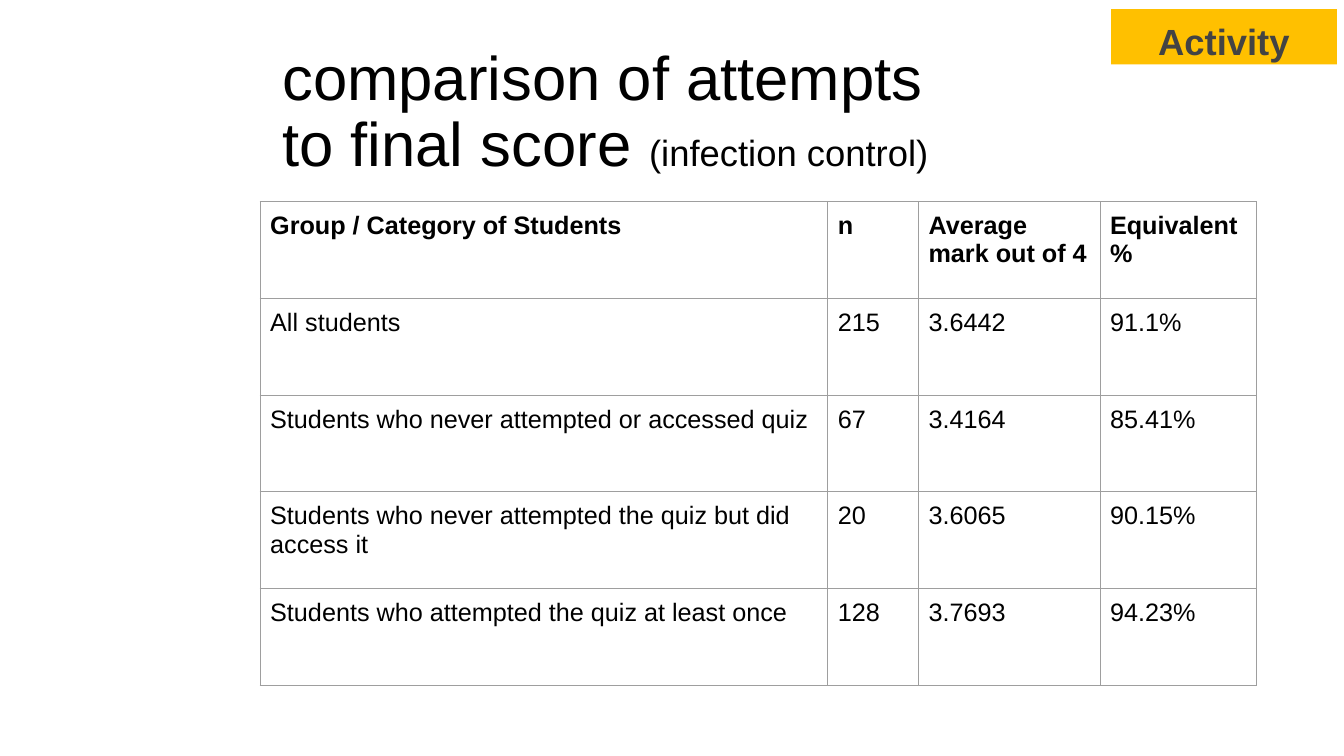
from lxml.etree import SubElement
from pptx import Presentation
from pptx.dml.color import RGBColor
from pptx.enum.shapes import MSO_SHAPE
from pptx.enum.text import MSO_ANCHOR, MSO_AUTO_SIZE, PP_ALIGN
from pptx.oxml.ns import qn
from pptx.util import Emu, Pt

SCALE = 9144
INSET = 10
COLORS = {"text": "000000", "border": "9E9E9E", "badge": "FFC000", "badge_text": "434343"}


def px(length):
    return Emu(length * SCALE)


def write(paragraph, text, size=18, bold=False, color="text", align=PP_ALIGN.LEFT):
    paragraph.alignment = align
    run = paragraph.add_run()
    run.text = text
    run.font.name = "Arial"
    run.font.size = Pt(size)
    run.font.bold = bold
    run.font.color.rgb = RGBColor.from_string(COLORS[color])


presentation = Presentation()
presentation.slide_width = px(1333)
presentation.slide_height = px(750)
slide = presentation.slides.add_slide(presentation.slide_layouts[5])

title = slide.shapes.title
title.left, title.top, title.width, title.height = px(270), px(40), px(710), px(145)
title_frame = title.text_frame
title_frame.auto_size = MSO_AUTO_SIZE.NONE
title_frame.vertical_anchor = MSO_ANCHOR.MIDDLE
title_paragraph = title_frame.paragraphs[0]
title_paragraph.line_spacing = 0.9
write(title_paragraph, "comparison of attempts to final score ", size=44)
write(title_paragraph, "(infection control)", size=26)

badge = slide.shapes.add_shape(MSO_SHAPE.RECTANGLE, px(1102), px(9), px(224), px(55))
badge.shadow.inherit = False
badge.fill.solid()
badge.fill.fore_color.rgb = RGBColor.from_string(COLORS["badge"])
badge.line.fill.background()
badge_frame = badge.text_frame
badge_frame.word_wrap = True
badge_frame.vertical_anchor = MSO_ANCHOR.TOP
write(badge_frame.paragraphs[0], "Activity", size=26, bold=True,
      color="badge_text", align=PP_ALIGN.CENTER)

for frame in (title_frame, badge_frame):
    frame.margin_left = frame.margin_right = px(INSET)
    frame.margin_top = frame.margin_bottom = px(INSET)

rows = [
    ("Group / Category of Students", "n", "Average mark out of 4", "Equivalent %"),
    ("All students", "215", "3.6442", "91.1%"),
    ("Students who never attempted or accessed quiz", "67", "3.4164", "85.41%"),
    ("Students who never attempted the quiz but did access it", "20", "3.6065", "90.15%"),
    ("Students who attempted the quiz at least once", "128", "3.7693", "94.23%"),
]
column_widths = [563, 90, 180, 155]
row_height = 96

table = slide.shapes.add_table(
    len(rows), len(column_widths), px(258), px(200),
    px(sum(column_widths)), px(row_height * len(rows))).table
table.first_row = False
table.horz_banding = False
for column, width in zip(table.columns, column_widths):
    column.width = px(width)

for row_index, row in enumerate(rows):
    for column_index, text in enumerate(row):
        cell = table.cell(row_index, column_index)
        cell.margin_left = cell.margin_right = px(INSET)
        cell.margin_top = cell.margin_bottom = px(INSET)
        cell.vertical_anchor = MSO_ANCHOR.TOP
        write(cell.text_frame.paragraphs[0], text, bold=row_index == 0)
        properties = cell._tc.get_or_add_tcPr()
        for side in ("a:lnL", "a:lnR", "a:lnT", "a:lnB"):
            border = SubElement(properties, qn(side), w=str(Pt(0.75)))
            border_fill = SubElement(border, qn("a:solidFill"))
            SubElement(border_fill, qn("a:srgbClr"), val=COLORS["border"])
        cell.fill.background()

presentation.save("out.pptx")
